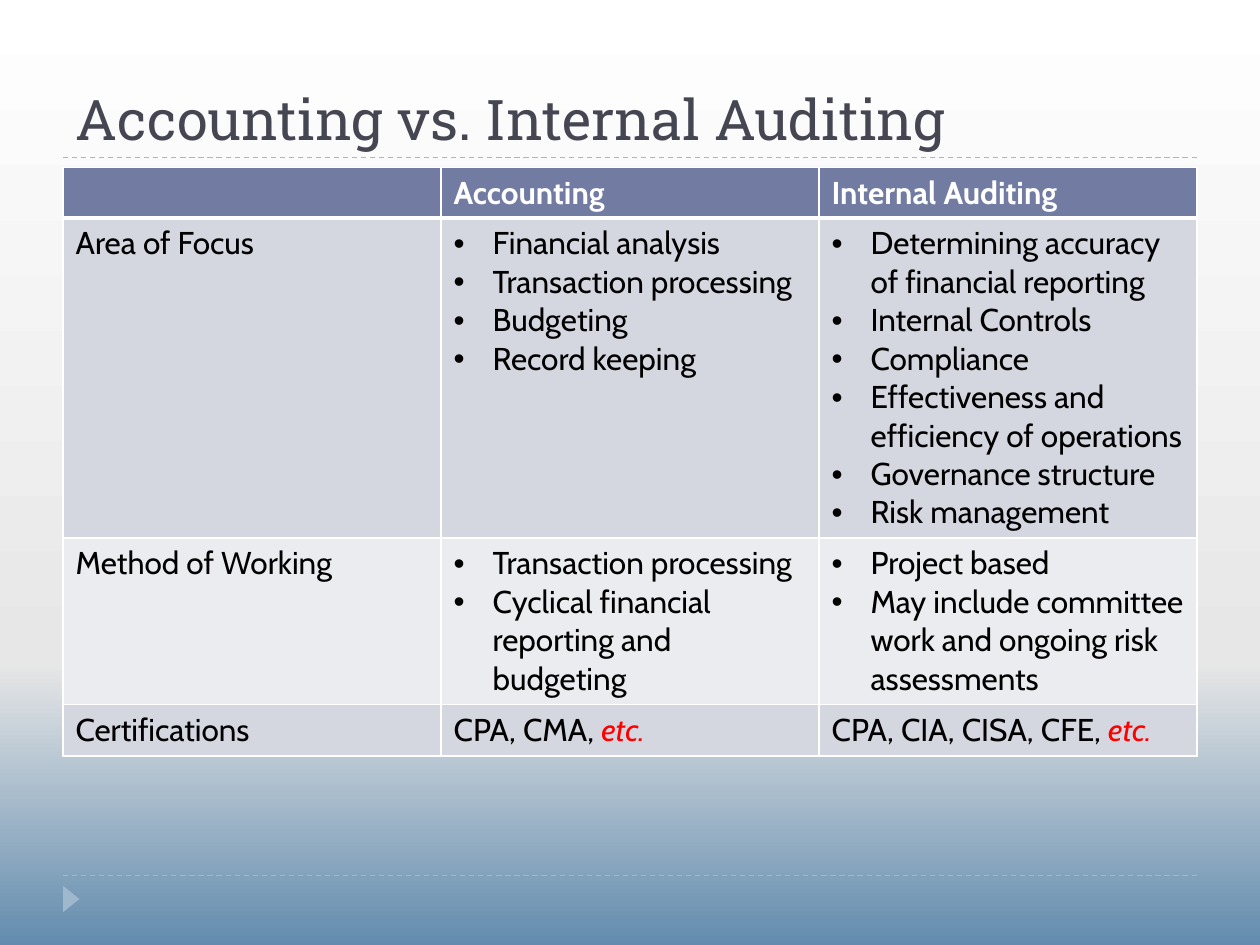
from copy import deepcopy
from dataclasses import dataclass

from pptx import Presentation
from pptx.dml.color import RGBColor as RGB
from pptx.enum.dml import MSO_LINE_DASH_STYLE as Dash
from pptx.enum.shapes import MSO_CONNECTOR as Connector, MSO_SHAPE as Shape
from pptx.enum.text import MSO_ANCHOR as Anchor
from pptx.oxml.ns import qn
from pptx.util import Inches, Pt
from lxml.etree import SubElement


@dataclass(frozen=True)
class Theme:
    heading_font: str = "Roboto Slab"
    body_font: str = "Cabin"
    heading_size: int = 32
    body_size: int = 18
    heading: str = "464653"
    body: str = "000000"
    accent: str = "FF0000"
    rule: str = "9FB8CD"
    white: str = "FFFFFF"
    header_fill: str = "727CA3"
    band_fills: tuple = ("D5D7E0", "EBECF0")
    sky: tuple = ((0, "638CAE"), (0.3, "E7E7E7"), (1, "FFFFFF"))


ETC = "etc."
HEADER = ["", "Accounting", "Internal Auditing"]
# A list is a bulleted cell; a string is a plain one.
COMPARISON = [
    ["Area of Focus",
     ["Financial analysis", "Transaction processing", "Budgeting",
      "Record keeping"],
     ["Determining accuracy of financial reporting", "Internal Controls",
      "Compliance", "Effectiveness and efficiency of operations",
      "Governance structure", "Risk management"]],
    ["Method of Working",
     ["Transaction processing", "Cyclical financial reporting and budgeting"],
     ["Project based",
      "May include committee work and ongoing risk assessments"]],
    ["Certifications", "CPA, CMA, " + ETC, "CPA, CIA, CISA, CFE, " + ETC],
]
ROW_HEIGHTS = [0.4, 2.54, 1.32, 0.41]


def add_text(paragraph, text, *, font, size, color, bold=False, italic=False):
    run = paragraph.add_run()
    run.text = text
    run.font.name = font
    run.font.size = Pt(size)
    run.font.color.rgb = RGB.from_string(color)
    run.font.bold = bold
    run.font.italic = italic


def add_bullet(paragraph, indent=0.31):
    props = paragraph._p.get_or_add_pPr()
    props.set("marL", str(Inches(indent)))
    props.set("indent", str(-Inches(indent)))
    SubElement(props, qn("a:buFont")).set("typeface", "Arial")
    SubElement(props, qn("a:buChar")).set("char", "•")


def add_borders(cell, color, bottom):
    """Draw 1 pt cell borders, with a bottom one of the given width."""
    props = cell._tc.get_or_add_tcPr()
    for side, width in (("L", 1), ("R", 1), ("T", 1), ("B", bottom)):
        border = SubElement(props, qn(f"a:ln{side}"), w=str(Pt(width)))
        fill = SubElement(border, qn("a:solidFill"))
        SubElement(fill, qn("a:srgbClr")).set("val", color)


class SlideBuilder:
    def __init__(self, slide, theme):
        self.slide = slide
        self.theme = theme

    def background(self):
        fill = self.slide.background.fill
        fill.gradient()
        fill.gradient_angle = 90
        stop_list = self.slide.element.find(".//" + qn("a:gsLst"))
        stop_list.append(deepcopy(stop_list[-1]))
        for stop, (position, color) in zip(fill.gradient_stops, self.theme.sky):
            stop.position = position
            stop.color.rgb = RGB.from_string(color)

    def dashed_rule(self, y):
        rule = self.slide.shapes.add_connector(
            Connector.STRAIGHT, Inches(0.5), Inches(y), Inches(9.5), Inches(y))
        rule.line.color.rgb = RGB.from_string(self.theme.rule)
        rule.line.width = Pt(0.75)
        rule.line.dash_style = Dash.DASH
        SubElement(rule._element.spPr, qn("a:effectLst"))

    def page_marker(self):
        marker = self.slide.shapes.add_shape(
            Shape.ISOSCELES_TRIANGLE,
            Inches(0.46), Inches(7.07), Inches(0.21), Inches(0.13))
        marker.rotation = 90
        marker.shadow.inherit = False
        marker.fill.solid()
        marker.fill.fore_color.rgb = RGB.from_string(self.theme.rule)
        marker.line.fill.background()

    def title(self, text):
        frame = self.slide.shapes.add_textbox(
            Inches(0.5), Inches(0.17), Inches(9), Inches(1.08)).text_frame
        frame.word_wrap = True
        frame.vertical_anchor = Anchor.BOTTOM
        add_text(frame.paragraphs[0], text, font=self.theme.heading_font,
                 size=self.theme.heading_size, color=self.theme.heading)

    def comparison_table(self, header, body, heights):
        rows = [header, *body]
        table = self.slide.shapes.add_table(
            len(rows), len(header), Inches(0.5), Inches(1.33),
            Inches(9), Inches(sum(heights))).table
        for r, (contents, height) in enumerate(zip(rows, heights)):
            table.rows[r].height = Inches(height)
            for c, content in enumerate(contents):
                self.fill_cell(table.cell(r, c), content, r)

    def fill_cell(self, cell, content, row):
        theme = self.theme
        is_header = row == 0
        add_borders(cell, theme.white, bottom=3 if is_header else 1)
        cell.fill.solid()
        cell.fill.fore_color.rgb = RGB.from_string(
            theme.header_fill if is_header else theme.band_fills[(row - 1) % 2])
        style = dict(font=theme.body_font, size=theme.body_size,
                     color=theme.white if is_header else theme.body,
                     bold=is_header)
        bulleted = isinstance(content, list)
        frame = cell.text_frame
        for i, item in enumerate(content if bulleted else [content]):
            paragraph = frame.add_paragraph() if i else frame.paragraphs[0]
            if bulleted:
                add_bullet(paragraph)
            plain = item.removesuffix(ETC)
            if plain:
                add_text(paragraph, plain, **style)
            if plain != item:
                add_text(paragraph, ETC,
                         **{**style, "color": theme.accent, "italic": True})


def main():
    deck = Presentation()
    deck.slide_width, deck.slide_height = Inches(10), Inches(7.5)
    builder = SlideBuilder(deck.slides.add_slide(deck.slide_layouts[6]), Theme())
    builder.background()
    for y in (6.95, 1.25):
        builder.dashed_rule(y)
    builder.page_marker()
    builder.title("Accounting vs. Internal Auditing")
    builder.comparison_table(HEADER, COMPARISON, ROW_HEIGHTS)
    deck.save("out.pptx")


if __name__ == "__main__":
    main()
